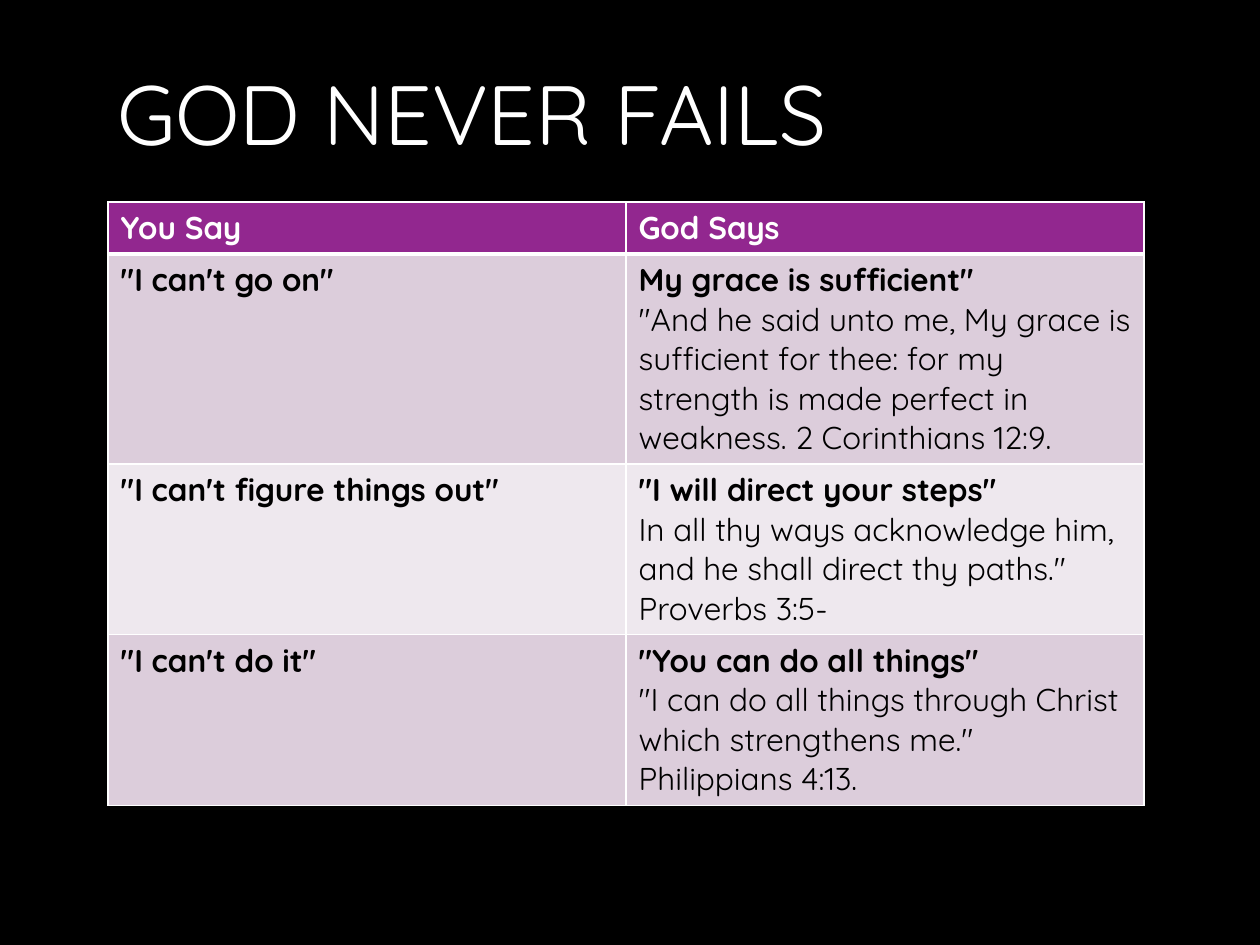
import pptx
import pptx.util
import pptx.dml.color
import pptx.enum.text
import pptx.oxml
import pptx.oxml.ns
from pptx.util import Cm, Pt

FONT = "Quicksand"
WHITE, BLACK = "FFFFFF", "000000"
HEADER_FILL = "92278F"
BAND_FILLS = ("DCCDDB", "EEE8EE")
ROW_HEIGHTS = (1.04, 4.2, 3.4, 3.4)

# A vertical tab is a line break between the promise and its verse
ROWS = (
    ("You Say", "God Says"),
    ('"I can\'t go on"',
     'My grace is sufficient"\v"And he said unto me, My grace is sufficient for thee: '
     'for my strength is made perfect in weakness. 2 Corinthians 12:9.'),
    ('"I can\'t figure things out"',
     '"I will direct your steps"\vIn all thy ways acknowledge him, '
     'and he shall direct thy paths." Proverbs 3:5-'),
    ('"I can\'t do it"',
     '"You can do all things"\v"I can do all things through Christ '
     'which strengthens me." Philippians 4:13.'),
)


def color(value):
    return pptx.dml.color.RGBColor.from_string(value)


def add_title(slide, text):
    title = slide.shapes.title
    title.left, title.top, title.width, title.height = Cm(2.11), Cm(0.43), Cm(20.85), Cm(3.66)
    frame = title.text_frame
    frame.text = text
    frame.word_wrap = True
    frame.vertical_anchor = pptx.enum.text.MSO_ANCHOR.MIDDLE
    para = frame.paragraphs[0]
    para.alignment = pptx.enum.text.PP_ALIGN.LEFT
    font = para.runs[0].font
    font.name, font.size = FONT, Pt(48)
    # Vertical fade from white to light grey
    font.fill.gradient()
    font.fill.gradient_angle = 270
    for stop, value in zip(font.fill.gradient_stops, (WHITE, "BFBFBF")):
        stop.color.rgb = color(value)


def set_borders(cell, bottom_width):
    properties = cell._tc.get_or_add_tcPr()
    for index, side in enumerate("LRTB"):
        width = Pt(bottom_width if side == "B" else 1)
        line = pptx.oxml.parse_xml(
            f'<a:ln{side} {pptx.oxml.ns.nsdecls("a")} w="{width}"><a:solidFill>'
            f'<a:srgbClr val="{WHITE}"/></a:solidFill></a:ln{side}>')
        properties.insert(index, line)


def fill_cell(cell, text, fill, text_color, bottom_width):
    cell.fill.solid()
    cell.fill.fore_color.rgb = color(fill)
    set_borders(cell, bottom_width)
    para = cell.text_frame.paragraphs[0]
    para.text = text
    for index, run in enumerate(para.runs):
        run.font.name, run.font.size = FONT, Pt(18)
        run.font.bold = index == 0
        run.font.color.rgb = color(text_color)


def add_promise_table(slide):
    frame = slide.shapes.add_table(len(ROWS), 2, Cm(2.18), Cm(4.07),
                                   Cm(20.88), Cm(sum(ROW_HEIGHTS)))
    table = frame.table
    for number, (texts, height) in enumerate(zip(ROWS, ROW_HEIGHTS)):
        table.rows[number].height = Cm(height)
        header = number == 0
        fill = HEADER_FILL if header else BAND_FILLS[(number - 1) % 2]
        for column, text in enumerate(texts):
            fill_cell(table.cell(number, column), text, fill,
                      WHITE if header else BLACK, 3 if header else 1)
    # The first body row shares the thick line under the header
    for cell in table.rows[1].cells:
        cell._tc.tcPr.find(pptx.oxml.ns.qn("a:lnT")).set("w", str(Pt(3)))


def main():
    deck = pptx.Presentation()
    deck.slide_width, deck.slide_height = Cm(25.4), Cm(19.05)
    slide = deck.slides.add_slide(deck.slide_layouts[5])
    slide.background.fill.solid()
    slide.background.fill.fore_color.rgb = color(BLACK)
    add_title(slide, "GOD NEVER FAILS")
    add_promise_table(slide)
    deck.save("out.pptx")


if __name__ == "__main__":
    main()
